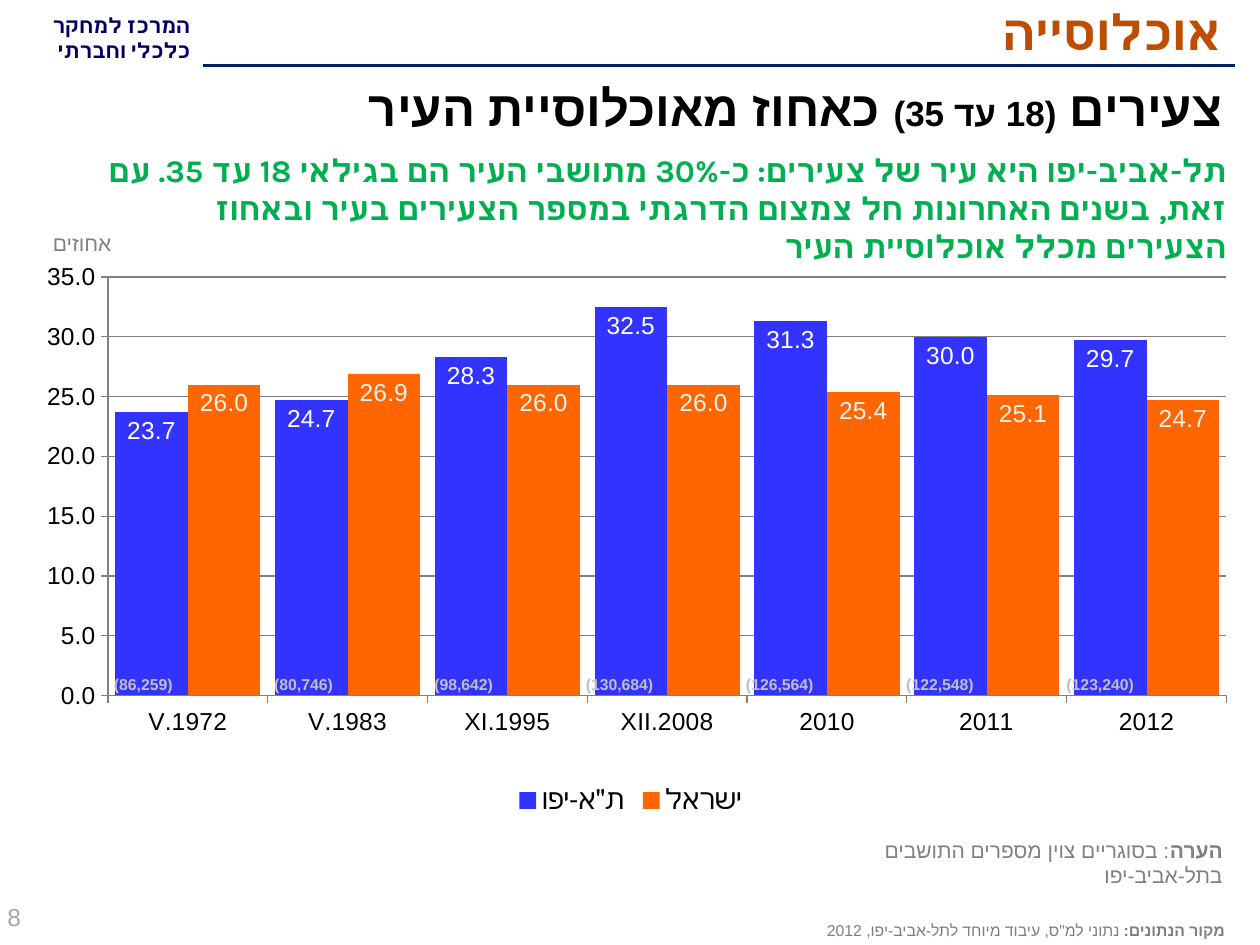
import pptx
import pptx.chart.data
import pptx.dml.color
import pptx.enum.chart
import pptx.enum.shapes
import pptx.enum.text
import pptx.oxml
import pptx.oxml.ns
import pptx.util

Cm = pptx.util.Cm
Pt = pptx.util.Pt
RGBColor = pptx.dml.color.RGBColor
ALIGN = pptx.enum.text.PP_ALIGN
ANCHOR = pptx.enum.text.MSO_ANCHOR
qn = pptx.oxml.ns.qn

NAVY = RGBColor(0x00, 0x00, 0x66)
RULE = RGBColor(0x00, 0x20, 0x60)
RUST = RGBColor(0xBF, 0x4D, 0x00)
GREEN = RGBColor(0x00, 0xB0, 0x50)
BLUE = RGBColor(0x33, 0x33, 0xFF)
ORANGE = RGBColor(0xFF, 0x66, 0x00)
BLACK = RGBColor(0x00, 0x00, 0x00)
WHITE = RGBColor(0xFF, 0xFF, 0xFF)
PALE = RGBColor(0xF2, 0xF2, 0xF2)
SILVER = RGBColor(0xBF, 0xBF, 0xBF)
MIST = RGBColor(0xA6, 0xA6, 0xA6)
GRAY = RGBColor(0x80, 0x80, 0x80)
DIM = RGBColor(0x7F, 0x7F, 0x7F)


def add(tag, home, **attrs):
    node = pptx.oxml.parse_xml(
        f'<{tag} xmlns:a="{pptx.oxml.ns.nsuri("a")}" xmlns:c="{pptx.oxml.ns.nsuri("c")}"/>')
    for key, val in attrs.items():
        node.set(key, str(val))
    home.append(node)
    return node


def write(shape, box, lines, size, color, face="Arial", bold=None,
          align=ALIGN.RIGHT, anchor=ANCHOR.TOP):
    shape.left, shape.top, shape.width, shape.height = map(Cm, box)
    frame = shape.text_frame
    frame.word_wrap = True
    frame.auto_size = pptx.enum.text.MSO_AUTO_SIZE.NONE
    frame.vertical_anchor = anchor
    for i, runs in enumerate(lines):
        para = frame.paragraphs[0] if i == 0 else frame.add_paragraph()
        para.alignment = align
        para.space_before = Pt(0)
        props = para._p.get_or_add_pPr()
        for key, val in (("rtl", "1"), ("marL", "0"), ("indent", "0")):
            props.set(key, val)
        add("a:buNone", props)
        font = para.font
        font.name, font.size, font.bold = face, Pt(size), bold
        font.color.rgb = color
        add("a:cs", props.find(qn("a:defRPr")), typeface=face)
        for text, weight, scale in runs:
            run = para.add_run()
            run.text = text
            if weight is not None:
                run.font.bold = weight
            if scale:
                run.font.size = Pt(scale)


deck = pptx.Presentation()
deck.slide_width, deck.slide_height = Cm(25.4), Cm(19.05)
slide = deck.slides.add_slide(deck.slide_layouts[3])
shapes = slide.shapes
title, lead, head = slide.placeholders

rule = shapes.add_connector(pptx.enum.shapes.MSO_CONNECTOR.STRAIGHT,
                            Cm(24.9), Cm(1.32), Cm(4.09), Cm(1.32))
rule.line.color.rgb = RULE
rule.line.width = Pt(2.25)
add("a:effectLst", rule._element.spPr)

write(title, (4.01, -0.08, 20.88, 1.4), [[("אוכלוסייה", None, None)]],
      28, RUST, "Calibri", True, anchor=ANCHOR.MIDDLE)
write(head, (0.23, 1.4, 24.66, 1.52),
      [[("צעירים ", None, None), ("(18 עד 35)", None, 20),
        (" כאחוז מאוכלוסיית העיר", None, None)]],
      28, BLACK, bold=True, anchor=ANCHOR.MIDDLE)
write(lead, (1.52, 2.92, 23.47, 1.4),
      [[("תל-אביב-יפו היא עיר של צעירים: כ-30% מתושבי העיר הם בגילאי 18 עד 35. "
         "עם זאת, בשנים האחרונות חל צמצום הדרגתי במספר הצעירים בעיר ובאחוז "
         "הצעירים מכלל אוכלוסיית העיר", None, None)]],
      18, GREEN, "Karla", True)

data = pptx.chart.data.CategoryChartData(number_format="0.0")
data.categories = ["V.1972", "V.1983", "XI.1995", "XII.2008", "2010", "2011", "2012"]
data.add_series('ת"א-יפו', (23.7, 24.7, 28.3, 32.5, 31.3, 30, 29.7))
data.add_series("ישראל", (26, 26.9, 26, 26, 25.4, 25.1, 24.7))
chart = shapes.add_chart(pptx.enum.chart.XL_CHART_TYPE.COLUMN_CLUSTERED,
                         Cm(0.46), Cm(5.13), Cm(24.51), Cm(11.4), data).chart
chart.has_title = False
chart.font.name, chart.font.size = "Arial", Pt(18)
chart.font.color.rgb = BLACK
chart.has_legend = True
chart.legend.position = pptx.enum.chart.XL_LEGEND_POSITION.BOTTOM
chart.legend.include_in_layout = False
chart.legend.font.size = Pt(16)

scale = chart.value_axis
scale.minimum_scale, scale.maximum_scale, scale.major_unit = 0, 35, 5
scale.tick_labels.number_format = "0.0"
scale.tick_labels.number_format_is_linked = False
scale.major_gridlines.format.line.color.rgb = GRAY
for axis in (scale, chart.category_axis):
    axis.tick_labels.font.size = Pt(14)
    axis.major_tick_mark = pptx.enum.chart.XL_TICK_MARK.OUTSIDE
    axis.format.line.color.rgb = GRAY

plot = chart.plots[0]
plot.gap_width, plot.overlap, plot.vary_by_categories = 20, 0, False
for bars, fill, ink in zip(plot.series, (BLUE, ORANGE), (WHITE, PALE)):
    bars.format.fill.solid()
    bars.format.fill.fore_color.rgb = fill
    tags = bars.data_labels
    tags.show_value = True
    tags.position = pptx.enum.chart.XL_LABEL_POSITION.INSIDE_END
    tags.number_format, tags.number_format_is_linked = "0.0", False
    tags.font.size = Pt(14)
    tags.font.color.rgb = ink

area = chart._chartSpace.chart.plotArea
for old in area.findall(qn("c:layout")):
    area.remove(old)
layout = add("c:layout", area)
area.insert(0, layout)
manual = add("c:manualLayout", layout)
for key, val in (("layoutTarget", "inner"), ("xMode", "edge"), ("yMode", "edge"),
                 ("x", 0.07), ("y", 0.04), ("w", 0.92), ("h", 0.74)):
    add("c:" + key, manual, val=val)

counts = ["86,259", "80,746", "98,642", "130,684", "126,564", "122,548", "123,240"]
notes = [((1.55 + 3.23 * i, 13.47, 2.18, 0.64), [[(f"({count})", None, None)]],
          9, SILVER, "Arial", True) for i, count in enumerate(counts)]
notes += [
    ((-0.38, 0.13, 4.47, 1.3),
     [[("המרכז למחקר", None, None)], [("כלכלי וחברתי", None, None)]],
     12, NAVY, "Calibri", True),
    ((5.94, 18.44, 19, 0.61),
     [[("מקור הנתונים: ", True, None),
       ('נתוני למ"ס, עיבוד מיוחד לתל-אביב-יפו, 2012', None, None)]],
     9, DIM, "Arial", None, ALIGN.RIGHT, ANCHOR.MIDDLE),
    ((-0.1, 17.93, 5.92, 1.12), [[("8", None, None)]],
     14, MIST, "Arial", None, ALIGN.LEFT, ANCHOR.MIDDLE),
    ((-0.3, 4.52, 3.91, 0.76), [[("אחוזים", None, None)]],
     12, GRAY, "Arial", None, ALIGN.CENTER),
    ((15.27, 16.76, 9.63, 0.76),
     [[("הערה", True, None),
       (": בסוגריים צוין מספרים התושבים בתל-אביב-יפו", None, None)]],
     12, GRAY),
]
for box, *rest in notes:
    write(shapes.add_textbox(*map(Cm, box)), box, *rest)

deck.save("out.pptx")
